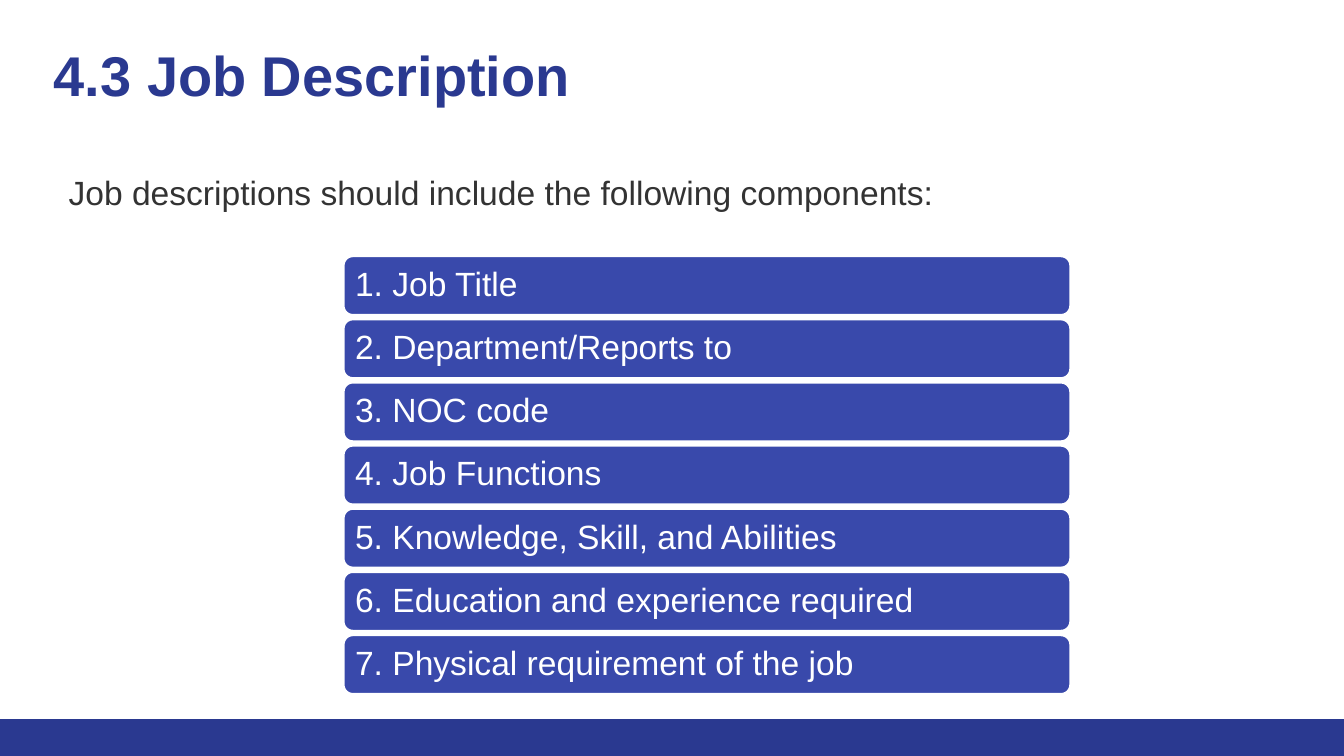
import pptx
import pptx.dml.color
import pptx.enum.shapes
import pptx.enum.text
import pptx.oxml.xmlchemy
import pptx.util

COMPONENTS = [
    "Job Title",
    "Department/Reports to",
    "NOC code",
    "Job Functions",
    "Knowledge, Skill, and Abilities",
    "Education and experience required",
    "Physical requirement of the job",
]
WIDTH = 10
HEIGHT = WIDTH * 9 / 16
NAVY, INDIGO, GREY, WHITE = "2A3990", "3949AB", "333333", "FFFFFF"
ANCHOR = pptx.enum.text.MSO_ANCHOR
SHAPE = pptx.enum.shapes.MSO_SHAPE


def color(hex_string):
    return pptx.dml.color.RGBColor.from_string(hex_string)


def write(tf, text, size=18, fill=GREY, bold=False, anchor=ANCHOR.TOP,
          inset=0.1, left=None, spacing=1.0):
    """Fill a text frame with one left-aligned paragraph."""
    tf.word_wrap = True
    tf.auto_size = pptx.enum.text.MSO_AUTO_SIZE.NONE
    tf.vertical_anchor = anchor
    tf.margin_left = pptx.util.Inches(left or inset)
    tf.margin_top = tf.margin_right = tf.margin_bottom = pptx.util.Inches(inset)
    p = tf.paragraphs[0]
    p.alignment = pptx.enum.text.PP_ALIGN.LEFT
    p.space_before = pptx.util.Pt(0)
    p.line_spacing = spacing
    r = p.add_run()
    r.text = text
    r.font.name, r.font.size, r.font.bold = "Arial", pptx.util.Pt(size), bold
    r.font.color.rgb = color(fill)


class Deck:
    """Holds the presentation, its style and the current slide."""

    def __init__(self):
        self.prs = pptx.Presentation()
        self.prs.slide_width = pptx.util.Inches(WIDTH)
        self.prs.slide_height = pptx.util.Inches(HEIGHT)
        self.s = self.prs.slides.add_slide(self.prs.slide_layouts[1])

    def box(self, x, y, w, h):
        """Turn shares of the slide's size into lengths."""
        return [pptx.util.Inches(share * side) for share, side in
                zip((x, y, w, h), (WIDTH, HEIGHT) * 2)]

    def place(self, sp, *shares):
        sp.left, sp.top, sp.width, sp.height = self.box(*shares)

    def title(self, text, *shares):
        sp = self.s.shapes.title
        self.place(sp, *shares)
        write(sp.text_frame, text, size=30, fill=NAVY, bold=True)

    def body(self, text, *shares):
        sp = self.s.placeholders[1]
        self.place(sp, *shares)
        # Plain paragraph: no bullet, no hanging indent
        pPr = sp.text_frame.paragraphs[0]._p.get_or_add_pPr()
        pPr.set("marL", "0")
        pPr.set("indent", "0")
        pPr.append(pptx.oxml.xmlchemy.OxmlElement("a:buNone"))
        write(sp.text_frame, text, left=0.17)

    def block(self, kind, fill, *shares, line=None):
        sp = self.s.shapes.add_shape(kind, *self.box(*shares))
        sp.shadow.inherit = False
        sp.fill.solid()
        sp.fill.fore_color.rgb = color(fill)
        if line:
            sp.line.color.rgb = color(line)
            sp.line.width = pptx.util.Pt(2)
        else:
            sp.line.fill.background()
        return sp

    def pill(self, text, *shares):
        sp = self.block(SHAPE.ROUNDED_RECTANGLE, INDIGO, *shares, line=WHITE)
        write(sp.text_frame, text, fill=WHITE, anchor=ANCHOR.MIDDLE,
              inset=0.07, spacing=0.9)


def main():
    deck = Deck()

    # Footer band, title and introduction
    deck.block(SHAPE.RECTANGLE, NAVY, 0, 5.35 / HEIGHT, 1, 1 - 5.35 / HEIGHT)
    deck.title("4.3 Job Description", 0.03, 0.2 / HEIGHT, 0.93, 0.66 / HEIGHT)
    deck.body("Job descriptions should include the following components:",
              0.034, 1.18 / HEIGHT, 0.93, 3.77 / HEIGHT)

    # Numbered components, stacked at an even pitch
    top, pitch, height = 1.9, 0.47, 0.45
    for row, name in enumerate(COMPONENTS):
        deck.pill(f"{row + 1}. {name}", 0.255, (top + row * pitch) / HEIGHT,
                  0.542, height / HEIGHT)

    deck.prs.save("out.pptx")


if __name__ == "__main__":
    main()
